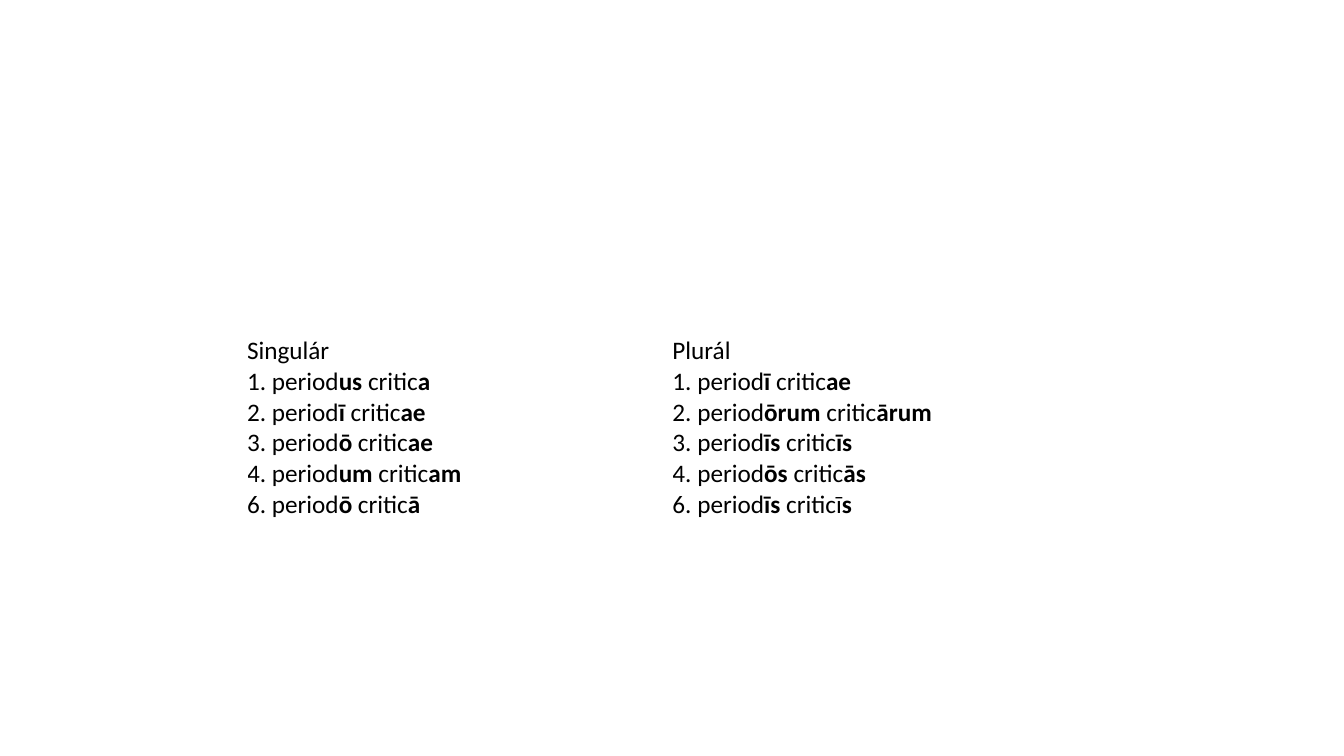
"""Build a slide with the singular and plural declension of periodus critica."""
from pptx import Presentation
from pptx.dml.color import RGBColor
from pptx.util import Inches, Pt

HUES = {"ink": "000000", "page": "FFFFFF"}
FONT, SIZE = "Calibri", 18
LINE = 0.3
FORMS = {
    "Singulár": [
        "1. period|us| critic|a",
        "2. period|ī| critic|ae",
        "3. period|ō| critic|ae",
        "4. period|um| critic|am",
        "6. period|ō| critic|ā",
    ],
    "Plurál": [
        "1. period|ī |critic|ae",
        "2. period|ōrum |critic|ārum",
        "3. period|īs |critic|īs",
        "4. period|ōs |critic|ās",
        "6. period|īs |criticī|s",
    ],
}


def fill_cell(cell, lines):
    cell.fill.solid()
    cell.fill.fore_color.rgb = RGBColor.from_string(HUES["page"])
    cell.margin_left = cell.margin_right = 0
    cell.margin_top = cell.margin_bottom = 0
    frame = cell.text_frame
    for row, line in enumerate(lines):
        para = frame.add_paragraph() if row else frame.paragraphs[0]
        for part, text in enumerate(line.split("|")):
            run = para.add_run()
            run.text = text
            run.font.name = FONT
            run.font.size = Pt(SIZE)
            run.font.bold = part % 2 == 1
            run.font.color.rgb = RGBColor.from_string(HUES["ink"])


deck = Presentation()
deck.slide_width = Inches(13.33)
deck.slide_height = Inches(7.5)
slide = deck.slides.add_slide(deck.slide_layouts[6])

frame = slide.shapes.add_table(
    2, len(FORMS), Inches(2.45), Inches(3.33), Inches(8.44), Inches(7 * LINE)
)
table = frame.table
table.first_row = False
table.horz_banding = False
table.rows[0].height = Inches(LINE)
table.rows[1].height = Inches(6 * LINE)

for col, (head, lines) in enumerate(FORMS.items()):
    fill_cell(table.cell(0, col), [head])
    fill_cell(table.cell(1, col), lines)

deck.save("out.pptx")
